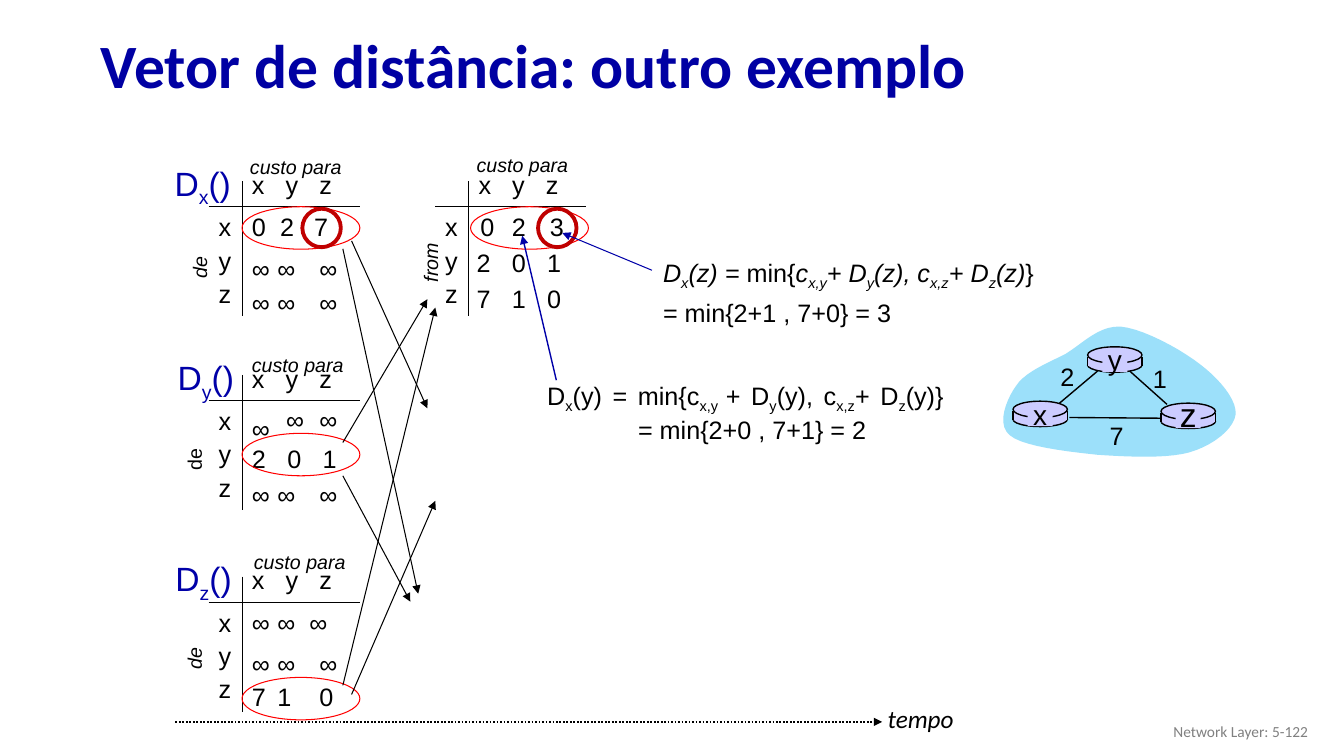
from lxml import etree
from pptx import Presentation
from pptx.dml.color import RGBColor
from pptx.enum.dml import MSO_LINE
from pptx.enum.shapes import MSO_CONNECTOR, MSO_SHAPE
from pptx.enum.text import MSO_ANCHOR, PP_ALIGN
from pptx.oxml.ns import qn
from pptx.util import Cm, Pt

LEFT, MID, RIGHT, FULL = PP_ALIGN.LEFT, PP_ALIGN.CENTER, PP_ALIGN.RIGHT, PP_ALIGN.JUSTIFY
OVAL, RECT = MSO_SHAPE.OVAL, MSO_SHAPE.RECTANGLE
INK = {"title": "0000A3", "blue": "0000A8", "black": "000000", "grey": "808080",
       "red": "FF0000", "dark": "C00000", "cloud": "9CE0FA", "node": "CCCCFF"}
INK = {key: RGBColor.from_string(code) for key, code in INK.items()}

deck = Presentation()
deck.slide_width, deck.slide_height = Cm(33.87), Cm(19.05)
slide = deck.slides.add_slide(deck.slide_layouts[5])
shapes = slide.shapes


def text(words, x, y, w, h=1.02, ink="black", para=None, anchor=MSO_ANCHOR.TOP, **form):
    """Add a text box; _ marks subscripts, | flips italics, / breaks a line."""
    box = shapes.add_textbox(Cm(x), Cm(y), Cm(w), Cm(h))
    frame = box.text_frame
    frame.word_wrap, frame.vertical_anchor = True, anchor
    form = {"name": "Arial", "size": Pt(18), "italic": False} | form
    for n, block in enumerate(words.split("\n")):
        par = frame.add_paragraph() if n else frame.paragraphs[0]
        for key, val in (para or {}).items():
            setattr(par, key, val)
        for k, row in enumerate(block.split("/")):
            if k:
                par.add_line_break()
            for i, chunk in enumerate(row.split("|")):
                for j, part in enumerate(chunk.split("_")):
                    if not part:
                        continue
                    run = par.add_run()
                    run.text = part
                    for key, val in form.items():
                        setattr(run.font, key, val)
                    run.font.italic = form["italic"] ^ (i % 2 == 1)
                    run.font.color.rgb = INK[ink]
                    if j % 2:
                        run.font._element.set("baseline", "-25000")
    return box


def line(x1, y1, x2, y2, width=0.75, ink="black", arrow=False):
    """Add a straight line, with an arrowhead at its end if wanted."""
    wire = shapes.add_connector(MSO_CONNECTOR.STRAIGHT, Cm(x1), Cm(y1), Cm(x2), Cm(y2))
    wire.line.width, wire.line.color.rgb = Pt(width), INK[ink]
    etree.SubElement(wire._element.spPr, qn("a:effectLst"))
    if arrow:
        etree.SubElement(wire.line._get_or_add_ln(), qn("a:tailEnd"), type="triangle")
    return wire


# Title and footer
title = shapes.title
title.left, title.top, title.width, title.height = Cm(2.29), Cm(0.48), Cm(30.25), Cm(2.49)
title.text_frame.text = "Vetor de distância: outro exemplo"
title.text_frame.vertical_anchor = MSO_ANCHOR.MIDDLE
head = title.text_frame.paragraphs[0]
head.alignment, head.line_spacing = LEFT, 0.9
for key, val in {"name": "Calibri", "size": Pt(44), "bold": True}.items():
    setattr(head.runs[0].font, key, val)
head.runs[0].font.color.rgb = INK["title"]
text("Network Layer: 5-122", 25.6, 17.91, 7.62, ink="grey", para={"alignment": RIGHT},
     anchor=MSO_ANCHOR.MIDDLE, name="Calibri", size=Pt(11))

# Distance tables: corner, then rows of values, drop and column offsets
WIDE = (0, 0.64, 1.7)
EVEN = (-0.05, 0.84, 1.73)
tables = [
    (6.1, 4.57, [("027", 0.64, (0, 0.71, 1.57)), ("∞∞∞", 1.68, WIDE), ("∞∞∞", 2.54, WIDE)]),
    (11.81, 4.57, [("023", 0.64, (0.05, 0.84, 1.8)), ("201", 1.55, EVEN), ("710", 2.44, EVEN)]),
    (6.1, 9.45, [("∞", 0.84, (0,)), ("∞∞", 0.61, (0.86, 1.7)),
                 ("201", 1.6, (0, 0.89, 1.78)), ("∞∞∞", 2.51, WIDE)]),
    (6.1, 14.53, [("∞∞∞", 0.64, (0, 0.64, 1.45)), ("∞∞∞", 1.68, WIDE), ("710", 2.51, WIDE)]),
]
for x, y, rows in tables:
    line(x, y, x, y + 3.4)
    line(x - 0.84, y + 0.64, x + 2.97, y + 0.64)
    for n, node in enumerate("xyz"):
        text(node, x + 0.85 * n, y - 0.43, 0.97)
        text(node, x - 0.84, y + 0.64 + 0.84 * n, 0.97)
    for row, drop, cols in rows:
        for cell, col in zip(row, cols):
            text(cell, x + col, y + drop, 0.97)

# Table names and captions
for node, x, y in [("x", 3.69, 4.04), ("y", 3.77, 8.94), ("z", 3.71, 14)]:
    text(f"D_{node}_()", x, y, 2.38, 1.12, "blue",
         {"alignment": RIGHT, "line_spacing": 0.85}, size=Pt(24))
for x, y in [(6.05, 3.78), (11.76, 3.73), (6.1, 8.76), (6.15, 13.72)]:
    text("custo para", x, y, 3.2, 0.86, size=Pt(14), italic=True)
for word, x, y, slant in [("de", 5.03, 6.73, True), ("from", 10.85, 6.62, True),
                          ("de", 4.9, 11.58, False), ("de", 4.9, 16.59, True)]:
    side = text(word, x - 1, y - 0.43, 2, 0.86, para={"alignment": MID},
                size=Pt(14), italic=slant)
    side.rotation = 270

# Rings around the values
rings = [(x, y, 2.97, 1.07, "red", 0.75)
         for x, y in [(6.1, 5.21), (11.86, 5.21), (6.1, 10.92), (6.1, 17.07)]]
rings += [(x, 5.26, 0.97, 0.97, "dark", 2.75) for x in (7.62, 13.56)]
for x, y, w, h, ink, width in rings:
    ring = shapes.add_shape(OVAL, Cm(x), Cm(y), Cm(w), Cm(h))
    ring.shadow.inherit = False
    ring.fill.background()
    ring.line.color.rgb, ring.line.width = INK[ink], Pt(width)

# Messages between tables, and time axis
for ends in [(8.86, 6.07, 10.77, 10.29), (8.64, 6.27, 10.54, 14.96),
             (8.64, 11.15, 10.77, 7.54), (8.64, 11.99, 10.34, 15.16),
             (8.64, 17.27, 10.97, 7.75), (8.86, 17.5, 10.97, 12.62)]:
    line(*ends, arrow=True)
axis = line(4.42, 18.19, 22.23, 18.19, 1.25, arrow=True)
axis.line.dash_style = MSO_LINE.ROUND_DOT
text("tempo", 22.12, 17.6, 2.6, name="Calibri", italic=True)

# Formulas
text("D_x_(z) = |min{|c_x,y_+ D_y_(z), c_x,z_+ D_z_(z)|}\n|= min{2+1 , 7+0} = 3|",
     16.46, 6.27, 10.16, 2.01, para={"line_spacing": 1.2},
     anchor=MSO_ANCHOR.MIDDLE, italic=True)
sum_y = text("D_x_(y) = min{c_x,y _+ D_y_(y), c_x,z_+ D_z_(y)}/= min{2+0 , 7+1} = 2",
             13.54, 9.5, 10.49, 1.8, para={"alignment": FULL}, anchor=MSO_ANCHOR.MIDDLE)
props = sum_y.text_frame.paragraphs[0]._p.get_or_add_pPr()
props.set("marL", str(Cm(2.29)))
props.set("indent", str(-Cm(2.29)))
line(14.02, 9.58, 13.16, 5.94, 1, "blue", True)
line(16.43, 6.81, 14.17, 5.87, 0.75, "blue", True)

# Cloud: Bezier curves, each with two handles and an end point
start = (25.6, 9.73)
curves = [
    ((25.83, 9.37), (26.42, 9.14), (26.85, 8.92)),
    ((27.28, 8.66), (27.69, 8.2), (28.24, 8.23)),
    ((28.8, 8.28), (29.74, 8.79), (30.23, 9.17)),
    ((30.71, 9.53), (31.17, 10.06), (31.14, 10.44)),
    ((31.09, 10.82), (30.56, 11.23), (29.97, 11.4)),
    ((29.39, 11.56), (28.4, 11.51), (27.66, 11.46)),
    ((26.9, 11.38), (25.78, 11.25), (25.45, 10.97)),
    ((25.1, 10.69), (25.37, 10.06), start),
]
STEPS = 10
dots, last = [], start
for one, two, end in curves:
    for n in range(1, STEPS + 1):
        t = n / STEPS
        u = 1 - t
        dots.append([Cm(u**3 * a + 3 * u * u * t * b + 3 * u * t * t * c + t**3 * d)
                     for a, b, c, d in zip(last, one, two, end)])
    last = end
pen = shapes.build_freeform(Cm(start[0]), Cm(start[1]))
pen.add_line_segments(dots, close=True)
cloud = pen.convert_to_shape()
cloud.shadow.inherit = False
cloud.fill.solid()
cloud.fill.fore_color.rgb = INK["cloud"]
cloud.line.fill.background()

# Links and their costs
for cost, x, y, ends in [("2", 26.47, 8.99, (26.7, 10.16, 27.66, 9.35)),
                         ("1", 28.8, 9.02, (28.47, 9.35, 29.41, 10.19)),
                         ("7", 27.71, 10.46, (29.31, 10.54, 26.95, 10.52))]:
    line(*ends, 1)
    text(cost, x, y, 0.86, para={"alignment": MID})

# Routers
parts = [(OVAL, 0, 0.28, 1.37, 0.36), (RECT, 0, 0.25, 1.37, 0.23),
         (OVAL, 0, 0, 1.37, 0.41), (RECT, 0.37, 0.05, 0.63, 0.58)]
for node, x, y, size, rise in [("x", 25.53, 10.11, 20, 0.23), ("z", 29.26, 10.16, 24, 0.36),
                               ("y", 27.41, 8.74, 20, 0.23)]:
    for kind, dx, dy, w, h in parts:
        part = shapes.add_shape(kind, Cm(x + dx), Cm(y + dy), Cm(w), Cm(h))
        part.shadow.inherit = False
        part.fill.solid()
        part.fill.fore_color.rgb = INK["node"]
        if kind == OVAL:
            part.line.color.rgb, part.line.width = INK["black"], Pt(1)
        else:
            part.line.fill.background()
    for edge in (x, x + 1.37):
        line(edge, y + 0.25, edge, y + 0.48, 1)
    text(node, x, y - rise, 1.37, 1.09, para={"alignment": MID}, size=Pt(size))

deck.save("out.pptx")
